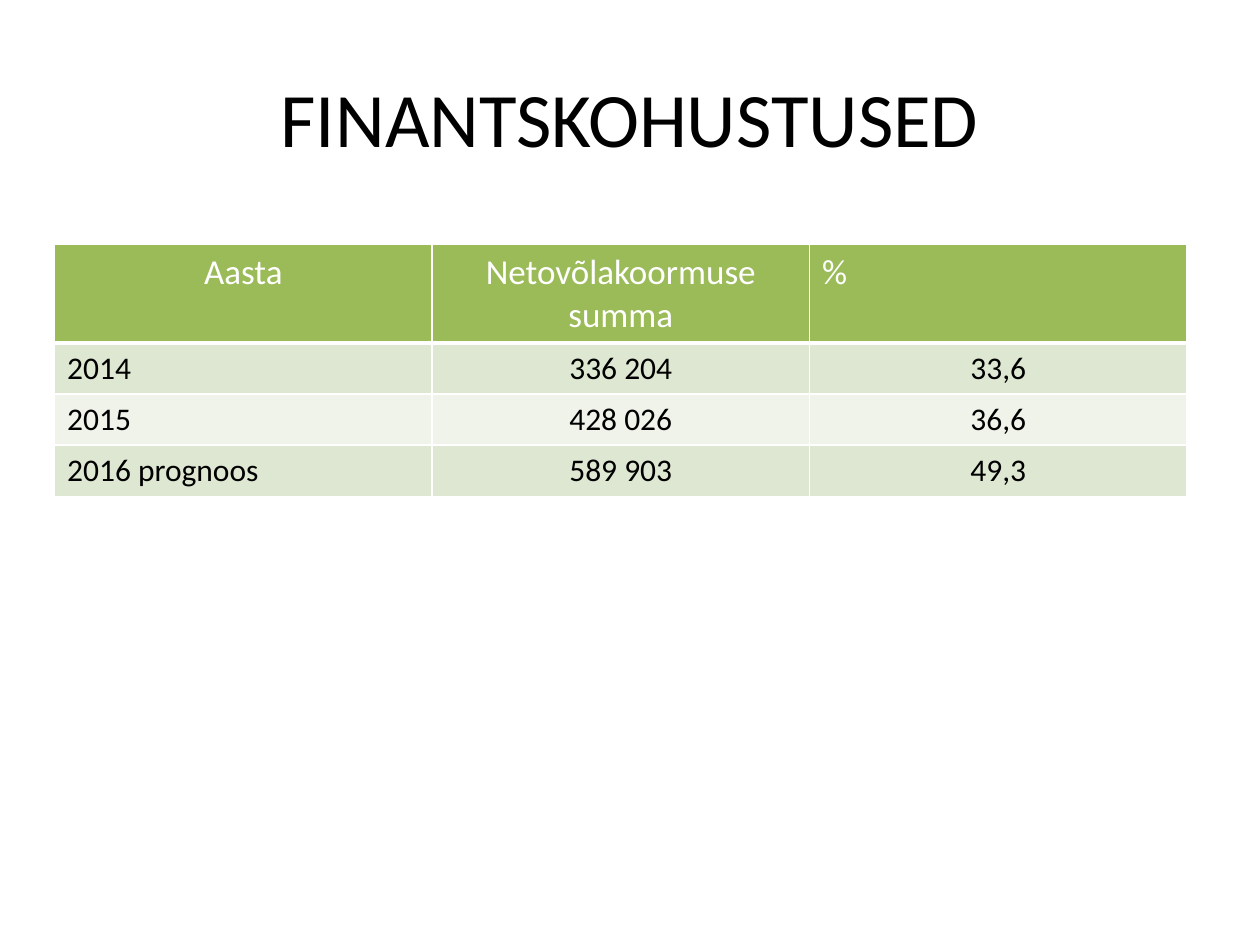
from dataclasses import dataclass

from lxml import etree
from pptx import Presentation
from pptx.dml.color import RGBColor
from pptx.enum import text
from pptx.oxml import ns
from pptx.util import Pt

ALIGN = text.PP_ALIGN


@dataclass(frozen=True)
class Theme:
    font: str = "Calibri"
    ink: str = "000000"
    white: str = "FFFFFF"
    header: str = "9BBB59"
    bands: tuple = ("DEE7D1", "EFF3EA")
    title_size: int = 44
    header_size: int = 20
    body_size: int = 18
    rule: int = 1
    header_rule: int = 3


class SlideBuilder:
    def __init__(self, page, theme):
        self.page = page
        self.theme = theme

    def set_words(self, frame, words, size, color, align):
        frame.text = words
        para = frame.paragraphs[0]
        para.alignment = align
        for span in para.runs:
            span.font.name = self.theme.font
            span.font.size = Pt(size)
            span.font.bold = False
            span.font.color.rgb = RGBColor.from_string(color)

    def title(self, words, left, top, width, height):
        box = self.page.shapes.title
        box.left, box.top, box.width, box.height = map(Pt, (left, top, width, height))
        box.text_frame.vertical_anchor = text.MSO_ANCHOR.MIDDLE
        self.set_words(box.text_frame, words, self.theme.title_size, self.theme.ink, ALIGN.CENTER)

    def borders(self, cell, bottom):
        """Draw the four cell edges; they must come before the fill in tcPr."""
        properties = cell._tc.get_or_add_tcPr()
        rule = self.theme.rule
        edges = {"lnL": rule, "lnR": rule, "lnT": rule, "lnB": bottom}
        for position, (tag, width) in enumerate(edges.items()):
            line = etree.Element(ns.qn(f"a:{tag}"), w=str(Pt(width)))
            fill = etree.SubElement(line, ns.qn("a:solidFill"))
            etree.SubElement(fill, ns.qn("a:srgbClr"), val=self.theme.white)
            properties.insert(position, line)

    def table(self, rows, header_aligns, body_aligns, left, top, column_width,
              header_height, row_height):
        theme = self.theme
        columns = len(rows[0])
        height = header_height + row_height * (len(rows) - 1)
        table = self.page.shapes.add_table(
            len(rows), columns, Pt(left), Pt(top),
            Pt(column_width * columns), Pt(height)).table
        for column in table.columns:
            column.width = Pt(column_width)
        for index, values in enumerate(rows):
            is_header = index == 0
            table.rows[index].height = Pt(header_height if is_header else row_height)
            fill = theme.header if is_header else theme.bands[(index - 1) % 2]
            size = theme.header_size if is_header else theme.body_size
            color = theme.white if is_header else theme.ink
            aligns = header_aligns if is_header else body_aligns
            for cell, words, align in zip(table.rows[index].cells, values, aligns):
                cell.fill.solid()
                cell.fill.fore_color.rgb = RGBColor.from_string(fill)
                self.borders(cell, theme.header_rule if is_header else theme.rule)
                self.set_words(cell.text_frame, words, size, color, align)


def main():
    deck = Presentation()
    deck.slide_width, deck.slide_height = Pt(720), Pt(540)
    title_only = deck.slide_layouts[5]
    builder = SlideBuilder(deck.slides.add_slide(title_only), Theme())
    builder.title("FINANTSKOHUSTUSED", 36, 21.6, 648, 90)
    builder.table(
        [("Aasta", "Netovõlakoormuse summa", "%"),
         ("2014", "336 204", "33,6"),
         ("2015", "428 026", "36,6"),
         ("2016 prognoos", "589 903", "49,3")],
        header_aligns=(ALIGN.CENTER, ALIGN.CENTER, ALIGN.JUSTIFY),
        body_aligns=(ALIGN.LEFT, ALIGN.CENTER, ALIGN.CENTER),
        left=31.2, top=139.8, column_width=215.7,
        header_height=56, row_height=29.2)
    deck.save("out.pptx")


if __name__ == "__main__":
    main()
